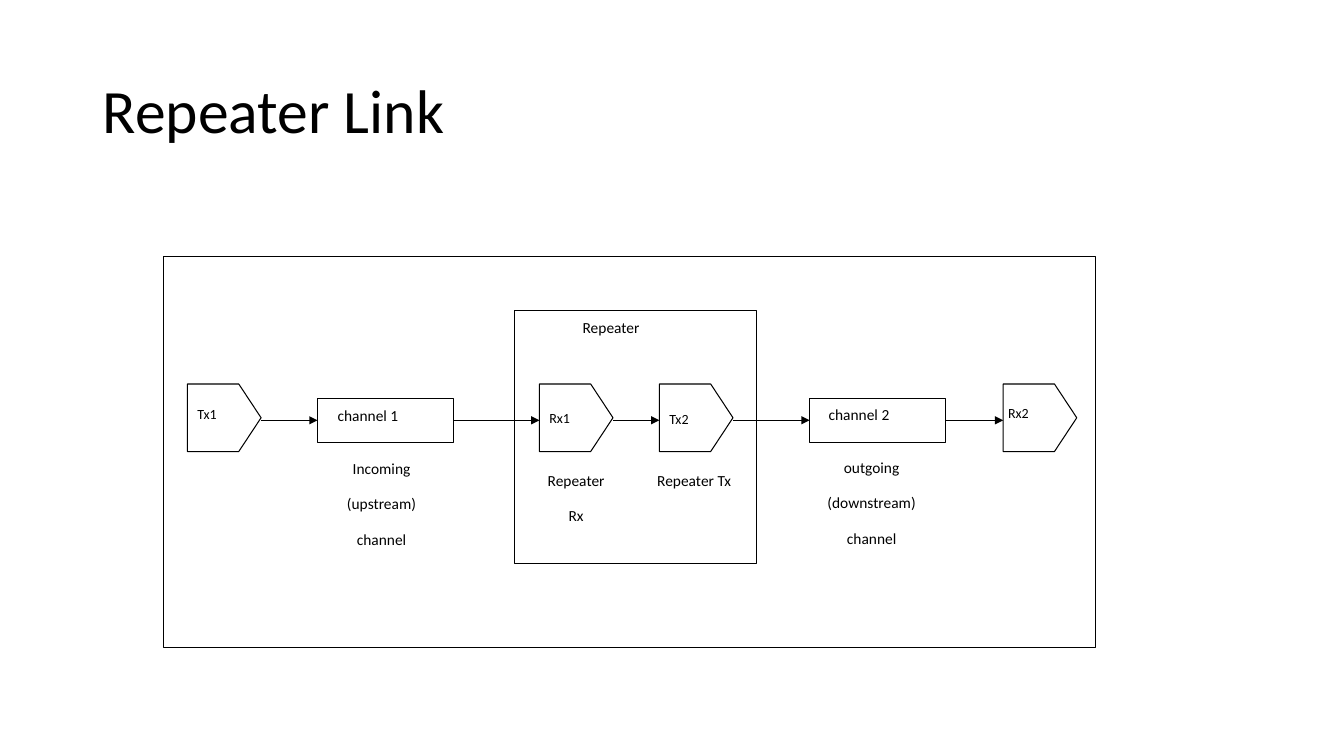
import pptx
import pptx.util
import pptx.dml.color
import pptx.enum.shapes
import pptx.enum.text
import pptx.oxml.ns
import lxml.etree

Inches = pptx.util.Inches
Pt = pptx.util.Pt
SHAPE = pptx.enum.shapes.MSO_SHAPE
ALIGN = pptx.enum.text.PP_ALIGN
ANCHOR = pptx.enum.text.MSO_ANCHOR
BLACK, WHITE = "000000", "FFFFFF"

TITLE = "Repeater Link"
LINK_FRAME = (1.62, 2.54, 9.25, 3.88)
REPEATER_FRAME = (5.1, 3.08, 2.4, 2.51)
CHANNEL_LEFTS = [3.15, 8.03]
CHANNEL_TOP, CHANNEL_W, CHANNEL_H = 3.95, 1.35, 0.44
STATION_LEFTS = [1.86, 5.35, 6.54, 9.95]
STATION_TOP, STATION_W, STATION_H = 3.81, 0.73, 0.67
STATION_POINT = 0.33
LABELS = [
    (["Tx1"], (1.86, 3.95, 0.62, 0.59), dict(size=10)),
    (["Rx1"], (5.35, 3.8, 0.63, 0.67), dict(size=10, anchor=ANCHOR.MIDDLE)),
    (["Tx2"], (6.54, 3.81, 0.62, 0.67), dict(size=10, anchor=ANCHOR.MIDDLE)),
    (["Rx2"], (9.9, 3.94, 0.62, 0.59), dict(size=10)),
    (["channel 1"], (3.25, 3.95, 1.26, 0.59), {}),
    (["channel 2"], (8.12, 3.94, 1.26, 0.59), {}),
    (["Repeater"], (5.68, 3.08, 1.48, 0.59), {}),
    (["Repeater", "Rx"], (5, 4.6, 1.43, 1.14), dict(align=ALIGN.CENTER)),
    (["Repeater Tx"], (6.2, 4.6, 1.37, 1.25), dict(align=ALIGN.CENTER)),
    (["Incoming", "(upstream)", "channel"], (3.07, 4.48, 1.43, 1.38), dict(align=ALIGN.CENTER)),
    (["outgoing", "(downstream)", "channel"], (7.74, 4.47, 1.81, 1.38), dict(align=ALIGN.CENTER)),
]


def color(value):
    return pptx.dml.color.RGBColor.from_string(value)


def write(tf, lines, size=11, align=ALIGN.LEFT, anchor=ANCHOR.TOP, spacing=1.15, after=10):
    tf.word_wrap = True
    tf.vertical_anchor = anchor
    for i, line in enumerate(lines):
        p = tf.paragraphs[0] if i == 0 else tf.add_paragraph()
        p.alignment, p.line_spacing, p.space_after = align, spacing, Pt(after)
        r = p.add_run()
        r.text = line
        r.font.name, r.font.size = "Calibri", Pt(size)
        r.font.color.rgb = color(BLACK)


def add_box(s, kind, box, fill=None):
    sp = s.shapes.add_shape(kind, *map(Inches, box))
    sp.shadow.inherit = False
    if fill:
        sp.fill.solid()
        sp.fill.fore_color.rgb = color(fill)
    else:
        sp.fill.background()
    sp.line.color.rgb = color(BLACK)
    sp.line.width = Pt(0.75)
    return sp


def add_arrow(s, x1, x2, y, source=None, target=None):
    c = s.shapes.add_connector(pptx.enum.shapes.MSO_CONNECTOR.STRAIGHT,
                               Inches(x1), Inches(y), Inches(x2), Inches(y))
    if source is not None:
        c.begin_connect(source, 3)
    if target is not None:
        c.end_connect(target, 1)
    c.line.color.rgb = color(BLACK)
    c.line.width = Pt(0.75)
    qn = pptx.oxml.ns.qn
    lxml.etree.SubElement(c.line._get_or_add_ln(), qn("a:tailEnd"), type="triangle")
    lxml.etree.SubElement(c._element.spPr, qn("a:effectLst"))


def main():
    prs = pptx.Presentation()
    prs.slide_width, prs.slide_height = Inches(13.33), Inches(7.5)
    s = prs.slides.add_slide(prs.slide_layouts[5])
    title = s.shapes.title
    title.left, title.top, title.width, title.height = map(Inches, (0.92, 0.4, 11.5, 1.45))
    write(title.text_frame, [TITLE], size=44, anchor=ANCHOR.MIDDLE, spacing=0.9, after=0)

    add_box(s, SHAPE.RECTANGLE, LINK_FRAME)
    add_box(s, SHAPE.RECTANGLE, REPEATER_FRAME)
    incoming, outgoing = [
        add_box(s, SHAPE.RECTANGLE, (x, CHANNEL_TOP, CHANNEL_W, CHANNEL_H), WHITE)
        for x in CHANNEL_LEFTS]
    for x in STATION_LEFTS:
        station = add_box(s, SHAPE.PENTAGON, (x, STATION_TOP, STATION_W, STATION_H))
        station.adjustments[0] = STATION_POINT
    for lines, box, style in LABELS:
        tb = s.shapes.add_textbox(*map(Inches, box))
        write(tb.text_frame, lines, **style)

    tx1, rx1, tx2, rx2 = STATION_LEFTS
    ch1, ch2 = CHANNEL_LEFTS
    y = CHANNEL_TOP + CHANNEL_H / 2
    add_arrow(s, tx1 + STATION_W, ch1, y, target=incoming)
    add_arrow(s, ch1 + CHANNEL_W, rx1, y, source=incoming)
    add_arrow(s, rx1 + STATION_W, tx2, y)
    add_arrow(s, tx2 + STATION_W, ch2, y, target=outgoing)
    add_arrow(s, ch2 + CHANNEL_W, rx2, y, source=outgoing)
    prs.save("out.pptx")


if __name__ == "__main__":
    main()
